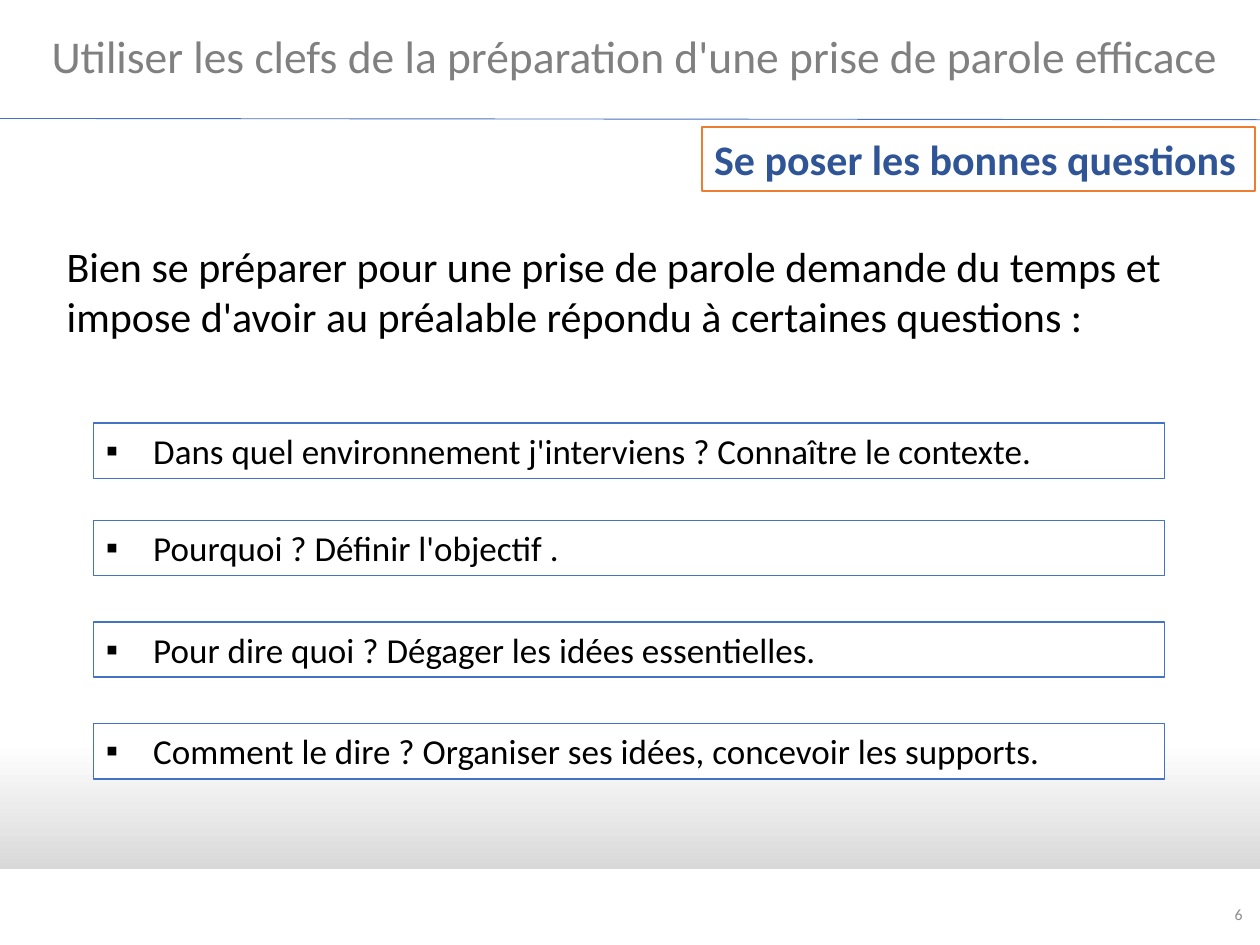
from dataclasses import dataclass

from lxml import etree
from pptx import Presentation
from pptx.dml.color import RGBColor
from pptx.enum.shapes import MSO_CONNECTOR, MSO_SHAPE
from pptx.enum.text import MSO_ANCHOR, MSO_AUTO_SIZE, PP_ALIGN
from pptx.oxml.ns import qn
from pptx.util import Pt

RECTANGLE = MSO_SHAPE.RECTANGLE
STRAIGHT = MSO_CONNECTOR.STRAIGHT
TOP, MIDDLE = MSO_ANCHOR.TOP, MSO_ANCHOR.MIDDLE
LEFT, CENTER, RIGHT = PP_ALIGN.LEFT, PP_ALIGN.CENTER, PP_ALIGN.RIGHT
NO_AUTOFIT = MSO_AUTO_SIZE.NONE


@dataclass(frozen=True)
class Theme:
    font: str = "Calibri"
    white: str = "FFFFFF"
    black: str = "000000"
    shade: str = "D9D9D9"
    title: str = "808080"
    number: str = "8C8C8C"
    blue: str = "4472C4"
    navy: str = "2F5597"
    orange: str = "ED7D31"
    title_size: float = 26
    lead_size: float = 24
    item_size: float = 20
    number_size: float = 9
    rule_width: float = 0.5
    frame_width: float = 1


class PageBuilder:
    """Holds the theme and the current page; all lengths are in points."""

    def __init__(self, theme, page):
        self.theme = theme
        self.page = page

    def set_text(self, shape, text, size, color, bold=False, align=LEFT,
                 anchor=TOP, wrap=True, bullet=None, indent=0):
        frame = shape.text_frame
        frame_format = {"word_wrap": wrap, "auto_size": NO_AUTOFIT,
                        "vertical_anchor": anchor}
        for name, value in frame_format.items():
            setattr(frame, name, value)
        para = frame.paragraphs[0]
        para.alignment = align
        if bullet:
            properties = para._p.get_or_add_pPr()
            properties.set("marL", str(Pt(indent)))
            properties.set("indent", str(-Pt(indent)))
            etree.SubElement(properties, qn("a:buFont")).set("typeface", "Arial")
            etree.SubElement(properties, qn("a:buChar")).set("char", bullet)
        span = para.add_run()
        span.text = text
        font_format = {"name": self.theme.font, "size": Pt(size), "bold": bold}
        for name, value in font_format.items():
            setattr(span.font, name, value)
        span.font.color.rgb = RGBColor.from_string(color)

    def title(self, area, text):
        holder = self.page.shapes.title
        for name, value in zip(("left", "top", "width", "height"), area):
            setattr(holder, name, Pt(value))
        self.set_text(holder, text, self.theme.title_size, self.theme.title,
                      align=CENTER)

    def text(self, area, text, size, color, **style):
        box = self.page.shapes.add_textbox(*map(Pt, area))
        self.set_text(box, text, size, color, **style)

    def rectangle(self, area):
        box = self.page.shapes.add_shape(RECTANGLE, *map(Pt, area))
        box.shadow.inherit = False
        return box

    def gradient_band(self, area, stops):
        band = self.rectangle(area)
        band.line.fill.background()
        band.fill.gradient()
        band.fill.gradient_angle = 270
        for stop, (position, color) in zip(band.fill.gradient_stops, stops):
            stop.position = position
            stop.color.rgb = RGBColor.from_string(color)

    def framed_text(self, area, text, size, color, border, **style):
        box = self.rectangle(area)
        box.fill.solid()
        box.fill.fore_color.rgb = RGBColor.from_string(self.theme.white)
        box.line.color.rgb = RGBColor.from_string(border)
        box.line.width = Pt(self.theme.frame_width)
        self.set_text(box, text, size, color, **style)

    def rule(self, start, end):
        line = self.page.shapes.add_connector(STRAIGHT, *map(Pt, start + end))
        line.line.color.rgb = RGBColor.from_string(self.theme.blue)
        line.line.width = Pt(self.theme.rule_width)
        etree.SubElement(line._element.spPr, qn("a:effectLst"))


def main():
    theme = Theme()
    deck = Presentation()
    deck.slide_width, deck.slide_height = Pt(720), Pt(540)
    builder = PageBuilder(theme, deck.slides.add_slide(deck.slide_layouts[5]))

    # Shaded floor, title and rule
    builder.gradient_band((0, 309.6, 720, 187.2),
                          ((0.61, theme.white), (1, theme.shade)))
    builder.title((5.8, 12.2, 714.2, 38.9),
                  "Utiliser les clefs de la préparation d'une prise de parole efficace")
    builder.rule((0, 67.7), (720, 68.4))

    # Page number
    builder.text((549.4, 508.3, 167.8, 28.8), "6", theme.number_size,
                 theme.number, align=RIGHT, anchor=MIDDLE)

    # Introduction and topic label
    builder.text((31, 133.9, 663.1, 65.5),
                 "Bien se préparer pour une prise de parole demande du temps et "
                 "impose d'avoir au préalable répondu à certaines questions :",
                 theme.lead_size, theme.black)
    builder.framed_text((401, 72.7, 316.1, 36.4), "Se poser les bonnes questions",
                        theme.lead_size, theme.navy, theme.orange,
                        bold=True, wrap=False)

    # Questions to answer
    questions = (
        (241.9, "Dans quel environnement j'interviens ? Connaître le contexte."),
        (297.4, "Pourquoi ? Définir l'objectif ."),
        (355.5, "Pour dire quoi ? Dégager les idées essentielles."),
        (413.5, "Comment le dire ? Organiser ses idées, concevoir les supports."),
    )
    for top, question in questions:
        builder.framed_text((53.5, top, 612, 31.5), question, theme.item_size,
                            theme.black, theme.blue, bullet="▪", indent=27)

    deck.save("out.pptx")


if __name__ == "__main__":
    main()
